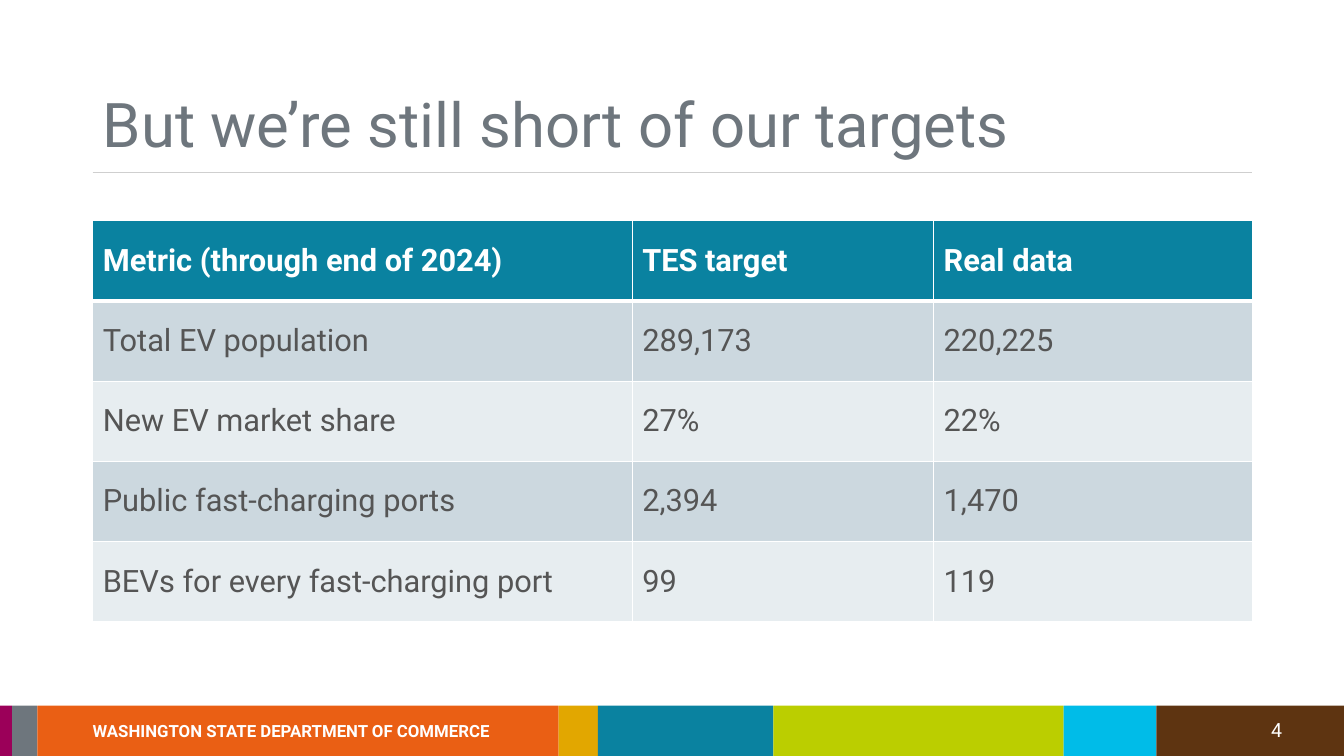
from lxml import etree
from pptx import Presentation
from pptx import util as u
from pptx.dml.color import RGBColor
from pptx.enum import shapes, text
from pptx.oxml import ns

WHITE = RGBColor(0xFF, 0xFF, 0xFF)
GRAY = RGBColor(0x6E, 0x76, 0x7D)
RULE = RGBColor(0xCF, 0xCF, 0xCF)
BODY = RGBColor(0x55, 0x55, 0x55)
ORANGE = RGBColor(0xEA, 0x5F, 0x14)
GOLD = RGBColor(0xE2, 0xA7, 0x00)
TEAL = RGBColor(0x0A, 0x82, 0xA0)
PLUM = RGBColor(0x9B, 0x00, 0x59)
LIME = RGBColor(0xBB, 0xCE, 0x00)
BROWN = RGBColor(0x5E, 0x34, 0x11)
SKY = RGBColor(0x00, 0xBC, 0xE8)
BANDS = [RGBColor(0xE7, 0xED, 0xF0), RGBColor(0xCC, 0xD8, 0xDF)]

WIDTH, HEIGHT = 13.33, 7.5
MARGIN, CONTENT_WIDTH = 0.92, 11.5
BAND_TOP, STRIP_TOP, STRIP_HEIGHT = 6.95, 6.91, 0.09


def write(frame, words, size, color, bold=False):
    paragraph = frame.paragraphs[0]
    paragraph.alignment = text.PP_ALIGN.LEFT
    run = paragraph.add_run()
    run.text = words
    run.font.color.rgb = color
    for name, value in {"name": "Roboto", "size": u.Pt(size), "bold": bold}.items():
        setattr(run.font, name, value)


def add_block(left, top, width, height, color):
    """Add a plain filled rectangle, measured in inches."""
    block = slide.shapes.add_shape(
        shapes.MSO_SHAPE.RECTANGLE, *map(u.Inches, (left, top, width, height)))
    block.shadow.inherit = False
    block.fill.solid()
    block.fill.fore_color.rgb = color
    block.line.fill.background()


presentation = Presentation()
presentation.slide_width = u.Inches(WIDTH)
presentation.slide_height = u.Inches(HEIGHT)
slide = presentation.slides.add_slide(presentation.slide_layouts[5])

# Title and the rule under it
title = slide.shapes.title
title_box = {"left": MARGIN, "top": 0.31, "width": CONTENT_WIDTH, "height": 1.33}
for name, value in title_box.items():
    setattr(title, name, u.Inches(value))
title_format = {"vertical_anchor": text.MSO_ANCHOR.BOTTOM, "word_wrap": True,
                "auto_size": text.MSO_AUTO_SIZE.NONE}
for name, value in title_format.items():
    setattr(title.text_frame, name, value)
write(title.text_frame, "But we’re still short of our targets", 44, GRAY)

rule = slide.shapes.add_connector(
    shapes.MSO_CONNECTOR.STRAIGHT,
    *map(u.Inches, (MARGIN, 1.71, MARGIN + CONTENT_WIDTH, 1.71)))
rule.line.color.rgb = RULE
rule.line.width = u.Pt(1)
etree.SubElement(rule._element.spPr, ns.qn("a:effectLst"))

# Footer band: each colour runs from the previous edge to its own right edge
left = 0
for right, color in [(0.12, PLUM), (0.37, GRAY), (5.54, ORANGE), (5.93, GOLD),
                     (7.67, TEAL), (10.55, LIME), (11.47, SKY), (WIDTH, BROWN)]:
    add_block(left, BAND_TOP, right - left, HEIGHT - BAND_TOP, color)
    left = right
add_block(0, STRIP_TOP, WIDTH, STRIP_HEIGHT, WHITE)

for box, words, size, bold in [
    ((0.82, 7.1, 4.23, 0.3), "WASHINGTON STATE DEPARTMENT OF COMMERCE", 12, True),
    ((12.51, 7.07, 0.44, 0.34), "4", 14, False),
]:
    label = slide.shapes.add_textbox(*map(u.Inches, box))
    label.text_frame.word_wrap = False
    write(label.text_frame, words, size, WHITE, bold)

# Table of targets against real data
rows = [
    ("Metric (through end of 2024)", "TES target", "Real data"),
    ("Total EV population", "289,173", "220,225"),
    ("New EV market share", "27%", "22%"),
    ("Public fast-charging ports", "2,394", "1,470"),
    ("BEVs for every fast-charging port", "99", "119"),
]
column_widths = [5.35, 2.99, 3.16]
table_height = 3.98
table = slide.shapes.add_table(
    len(rows), len(column_widths),
    *map(u.Inches, (MARGIN, 2.19, CONTENT_WIDTH, table_height))).table
for column, width in zip(table.columns, column_widths):
    column.width = u.Inches(width)

for row_index, row in enumerate(rows):
    table.rows[row_index].height = u.Inches(table_height / len(rows))
    header = row_index == 0
    for column_index, words in enumerate(row):
        cell = table.cell(row_index, column_index)
        cell.vertical_anchor = text.MSO_ANCHOR.MIDDLE
        write(cell.text_frame, words, 22, WHITE if header else BODY, header)
        properties = cell._tc.get_or_add_tcPr()
        for side in "LRTB":
            thick = (side == "B" and header) or (side == "T" and row_index == 1)
            border = etree.SubElement(
                properties, ns.qn(f"a:ln{side}"), w=str(u.Pt(3 if thick else 1)))
            fill = etree.SubElement(border, ns.qn("a:solidFill"))
            etree.SubElement(fill, ns.qn("a:srgbClr"), val=str(WHITE))
        cell.fill.solid()
        cell.fill.fore_color.rgb = TEAL if header else BANDS[row_index % 2]

presentation.save("out.pptx")
